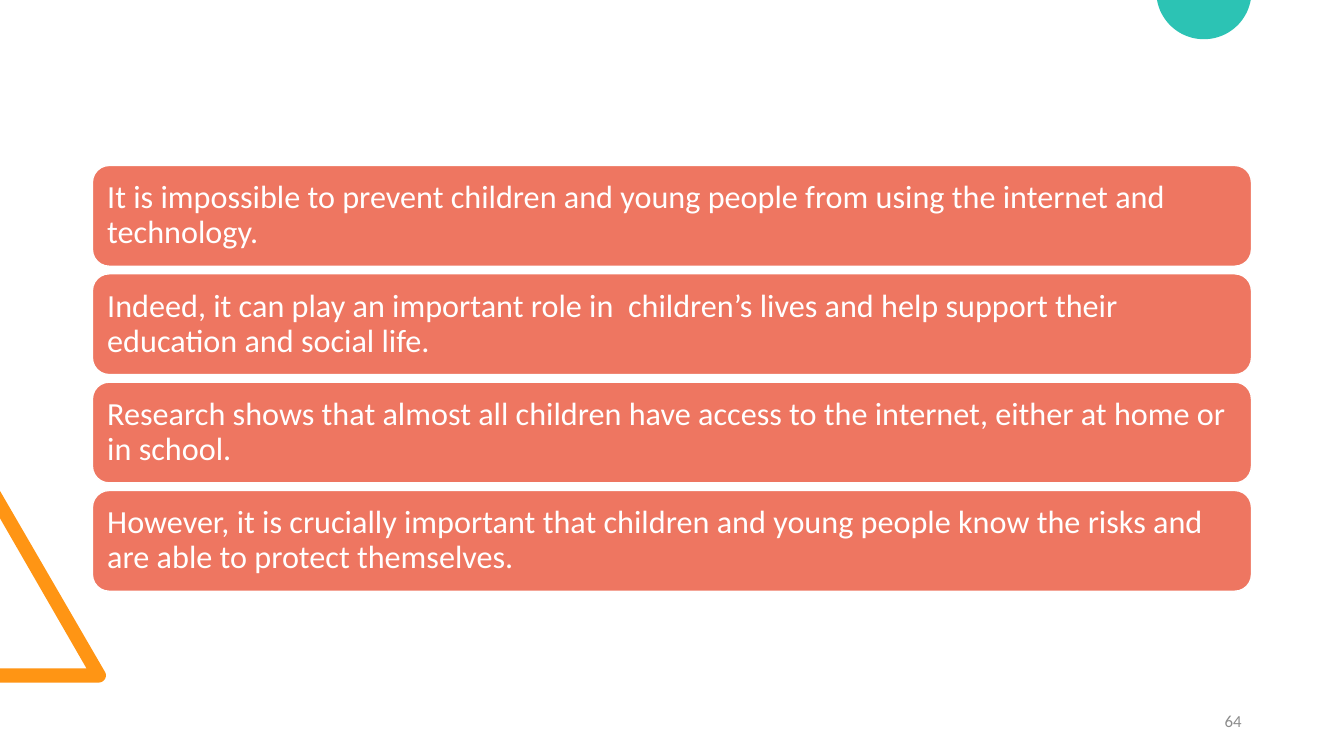
from math import cos, radians, sin

from pptx import Presentation
from pptx.dml.color import RGBColor
from pptx.enum.shapes import MSO_SHAPE
from pptx.enum.text import MSO_ANCHOR, PP_ALIGN
from pptx.util import Cm, Pt

ROUNDED = MSO_SHAPE.ROUNDED_RECTANGLE
MIDDLE = MSO_ANCHOR.MIDDLE
LEFT, RIGHT = PP_ALIGN.LEFT, PP_ALIGN.RIGHT
FONT = "Calibri"
COLORS = {
    "white": "FFFFFF",
    "coral": "EE7661",
    "teal": "2CC3B4",
    "orange": "FF9514",
    "grey": "8C8C8C",
}
STATEMENTS = [
    "It is impossible to prevent children and young people from using the internet and technology.",
    "Indeed, it can play an important role in  children’s lives and help support their education and social life.",
    "Research shows that almost all children have access to the internet, either at home or in school.",
    "However, it is crucially important that children and young people know the risks and are able to protect themselves.",
]


def color(name):
    return RGBColor.from_string(COLORS[name])


def arc(center_x, center_y, radius, start, end, steps=48):
    """Return points along an arc; angles in degrees, clockwise from the right."""
    angles = [radians(start + (end - start) * i / steps) for i in range(steps + 1)]
    return [(center_x + radius * cos(a), center_y + radius * sin(a)) for a in angles]


def add_outline(slide, points, fill):
    """Draw a closed, filled polygon through points given in centimetres."""
    corners = [(Cm(x), Cm(y)) for x, y in points]
    builder = slide.shapes.build_freeform(*corners[0])
    builder.add_line_segments(corners[1:], close=True)
    outline = builder.convert_to_shape()
    outline.shadow.inherit = False
    outline.fill.solid()
    outline.fill.fore_color.rgb = color(fill)
    outline.line.fill.background()


def write(frame, text, size, fill, align):
    frame.word_wrap = True
    frame.vertical_anchor = MIDDLE
    paragraph = frame.paragraphs[0]
    paragraph.text = text
    paragraph.alignment = align
    paragraph.font.name = FONT
    paragraph.font.size = Pt(size)
    paragraph.font.color.rgb = color(fill)
    return paragraph


def add_triangle(slide, top, width, bottom):
    """Draw the triangle's band, cut off by the left edge of the slide."""
    band, corner = 0.36, 0.18
    tip = arc(width - corner, bottom - corner, corner, -30, 90)
    inner = [(0, bottom), (0, bottom - band), (width - 0.49, bottom - band),
             (0, top + 0.69), (0, top)]
    add_outline(slide, inner + tip, "orange")


def add_half_disc(slide, center_x, center_y, radius):
    """Draw the part of a disc that lies below the slide's top edge."""
    add_outline(slide, arc(center_x, center_y, radius, 10, 170), "teal")


def add_statements(slide, left, top, width, height):
    """Stack the statements as equal bars that fill the box."""
    gap = 0.19
    bar_height = (height - gap * (len(STATEMENTS) - 1)) / len(STATEMENTS)
    for row, statement in enumerate(STATEMENTS):
        bar_top = top + row * (bar_height + gap)
        bar = slide.shapes.add_shape(
            ROUNDED, Cm(left), Cm(bar_top), Cm(width), Cm(bar_height))
        bar.shadow.inherit = False
        bar.fill.solid()
        bar.fill.fore_color.rgb = color("coral")
        bar.line.color.rgb = color("white")
        bar.line.width = Pt(1)
        frame = bar.text_frame
        frame.margin_left = frame.margin_right = Cm(0.25)
        frame.margin_top = frame.margin_bottom = Cm(0.25)
        write(frame, statement, 23, "white", LEFT).line_spacing = 0.9


def add_page_number(slide, left, top, width, height):
    number = slide.shapes.add_textbox(Cm(left), Cm(top), Cm(width), Cm(height))
    write(number.text_frame, "64", 12, "grey", RIGHT)


def main():
    deck = Presentation()
    deck.slide_width, deck.slide_height = Cm(33.87), Cm(19.05)
    slide = deck.slides.add_slide(deck.slide_layouts[6])
    add_triangle(slide, top=12.37, width=2.67, bottom=17.2)
    add_half_disc(slide, center_x=30.34, center_y=-0.21, radius=1.2)
    add_page_number(slide, 23.92, 17.66, 7.62, 1.01)
    add_statements(slide, 2.33, 4.17, 29.21, 10.73)
    deck.save("out.pptx")


if __name__ == "__main__":
    main()
